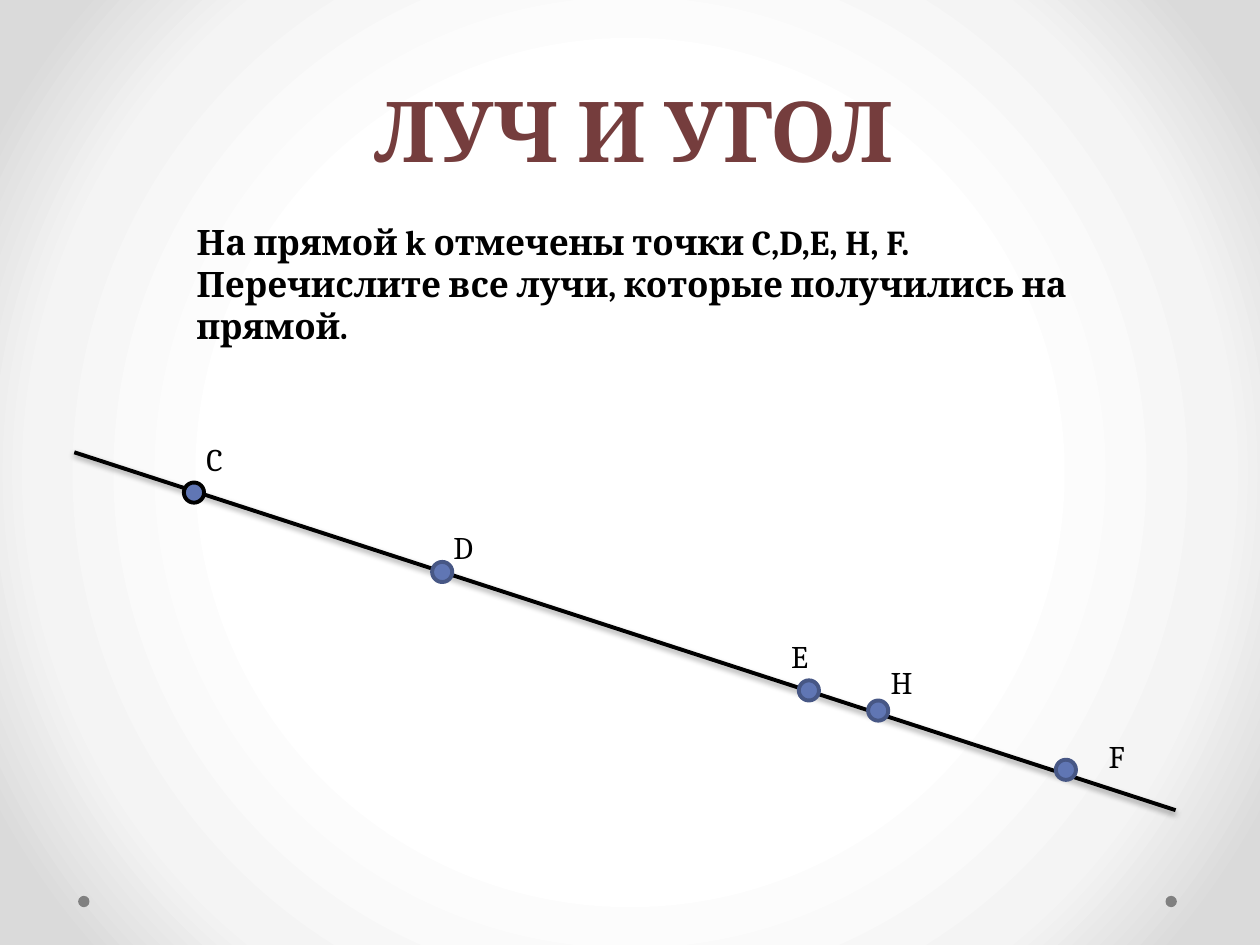
from pptx import Presentation
from pptx.dml.color import RGBColor
from pptx.enum.shapes import MSO_CONNECTOR, MSO_SHAPE
from pptx.enum.text import MSO_ANCHOR, MSO_AUTO_SIZE, PP_ALIGN
from pptx.oxml import parse_xml
from pptx.oxml.ns import nsdecls
from pptx.util import Inches, Pt

COLORS = {
    "title": "753D3D",
    "ink": "000000",
    "point": "6076B4",
    "point_edge": "475785",
    "corner_dot": "808080",
}
BACKGROUND_STOPS = [(50, "FFFFFF"), (76, "F4F4F4"), (92, "DADADA")]
FONT = "Cambria"
POINT_SIZE = 0.16
CORNER_SIZE = 0.09
LINE_WIDTH = 2.25

TASK = [
    "На прямой k отмечены точки C,D,E, H, F.",
    "Перечислите все лучи, которые получились на прямой.",
]
POINTS = [
    ("C", (1.46, 3.83), (1.54, 3.44, 0.38, 0.4), "ink"),
    ("D", (3.43, 4.46), (3.5, 4.14, 0.4, 0.4), "point_edge"),
    ("E", (6.34, 5.4), (6.18, 5.01, 0.36, 0.4), "point_edge"),
    ("H", (6.89, 5.56), (6.97, 5.21, 0.41, 0.4), "point_edge"),
    ("F", (8.38, 6.03), (8.7, 5.8, 0.34, 0.4), "point_edge"),
]


def color(name):
    return RGBColor.from_string(COLORS[name])


def set_values(target, values):
    for name, value in values.items():
        setattr(target, name, value)


def set_background(slide):
    stops = "".join(
        f'<a:gs pos="{position * 1000}"><a:srgbClr val="{value}"/></a:gs>'
        for position, value in BACKGROUND_STOPS
    )
    slide._element.cSld.insert(0, parse_xml(
        f'<p:bg {nsdecls("p", "a")}><p:bgPr><a:gradFill rotWithShape="1">'
        f'<a:gsLst>{stops}</a:gsLst><a:path path="circle">'
        '<a:fillToRect l="50000" t="50000" r="50000" b="50000"/></a:path>'
        '</a:gradFill><a:effectLst/></p:bgPr></p:bg>'
    ))


def write_text(shape, box, lines, size, color_name="ink", bold=False,
               wrap=False, align=PP_ALIGN.LEFT, anchor=MSO_ANCHOR.TOP):
    set_values(shape, dict(zip(("left", "top", "width", "height"), map(Inches, box))))
    frame = shape.text_frame
    frame.text = "\n".join(lines)
    set_values(frame, {
        "word_wrap": wrap,
        "auto_size": MSO_AUTO_SIZE.NONE,
        "vertical_anchor": anchor,
    })
    for paragraph in frame.paragraphs:
        set_values(paragraph, {"alignment": align, "space_before": Pt(0)})
        properties = paragraph._p.get_or_add_pPr()
        properties.set("marL", "0")
        properties.set("indent", "0")
        properties.append(parse_xml(f'<a:buNone {nsdecls("a")}/>'))
        font = paragraph.runs[0].font
        set_values(font, {"name": FONT, "size": Pt(size), "bold": bold})
        font.color.rgb = color(color_name)


def add_dot(slide, position, diameter, fill, edge=None):
    size = Inches(diameter)
    dot = slide.shapes.add_shape(MSO_SHAPE.OVAL, *map(Inches, position), size, size)
    dot.shadow.inherit = False
    dot.fill.solid()
    dot.fill.fore_color.rgb = color(fill)
    if edge:
        dot.line.color.rgb = color(edge)
        dot.line.width = Pt(LINE_WIDTH)
    else:
        dot.line.fill.background()


def add_straight_line(slide, start, end):
    line = slide.shapes.add_connector(
        MSO_CONNECTOR.STRAIGHT, *map(Inches, start + end))
    line.line.color.rgb = color("ink")
    line.line.width = Pt(LINE_WIDTH)
    line._element.spPr.append(parse_xml(
        f'<a:effectLst {nsdecls("a")}><a:outerShdw blurRad="{Pt(3.1)}" '
        f'dist="{Pt(1.6)}" dir="5400000" rotWithShape="0">'
        f'<a:srgbClr val="{COLORS["ink"]}"><a:alpha val="38000"/></a:srgbClr>'
        '</a:outerShdw></a:effectLst>'
    ))


def add_point(slide, letter, position, label_box, edge):
    add_dot(slide, position, POINT_SIZE, "point", edge)
    label = slide.shapes.add_textbox(*map(Inches, label_box))
    write_text(label, label_box, [letter], 18)


def main():
    presentation = Presentation()
    set_values(presentation, {"slide_width": Inches(10), "slide_height": Inches(7.5)})
    slide = presentation.slides.add_slide(presentation.slide_layouts[1])
    set_background(slide)
    for left in (9.25, 0.62):
        add_dot(slide, (left, 7.11), CORNER_SIZE, "corner_dot")
    write_text(slide.shapes.title, (2.8, 0.57, 4.47, 0.91), ["ЛУЧ И УГОЛ"], 48,
               "title", bold=True, align=PP_ALIGN.CENTER, anchor=MSO_ANCHOR.MIDDLE)
    write_text(slide.placeholders[1], (1.46, 1.7, 8.08, 0.77), TASK, 20,
               bold=True, wrap=True)
    add_straight_line(slide, (0.59, 3.59), (9.33, 6.43))
    for point in POINTS:
        add_point(slide, *point)
    presentation.save("out.pptx")


if __name__ == "__main__":
    main()
